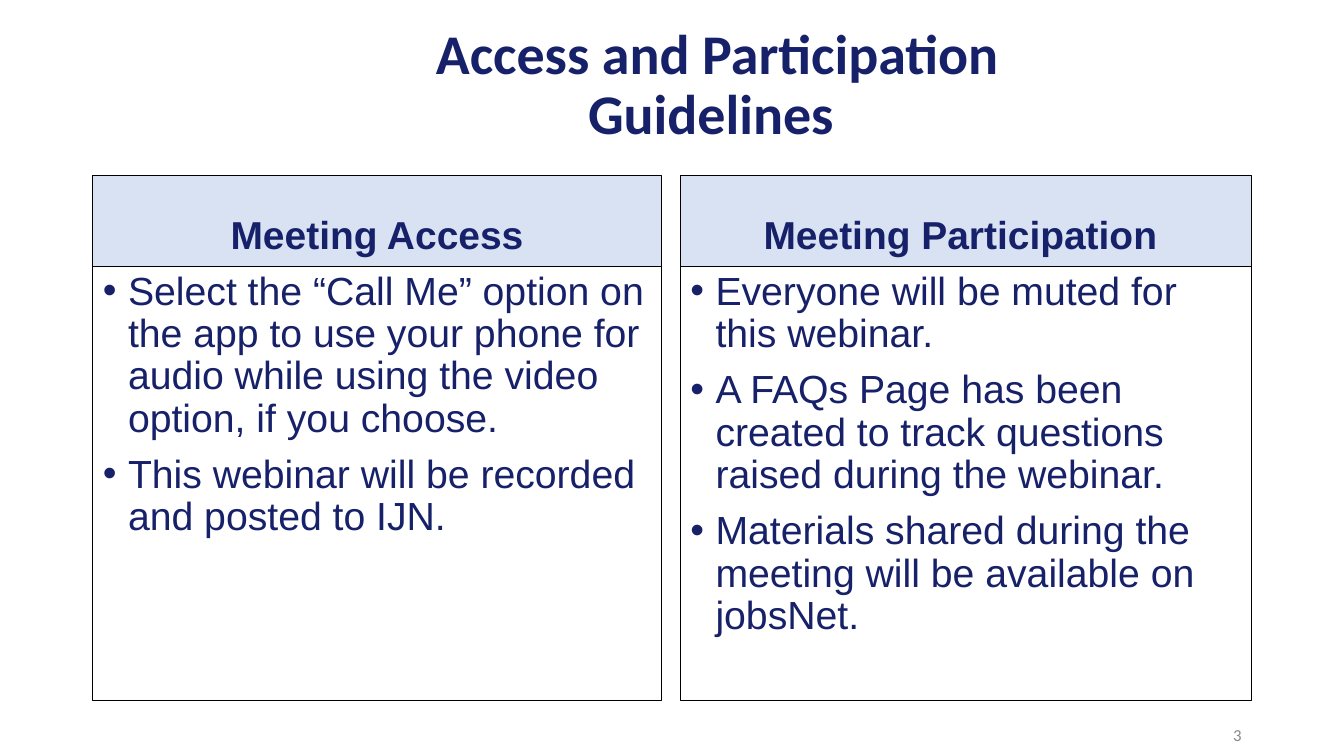
from pptx import Presentation
from pptx.dml.color import RGBColor
from pptx.enum import shapes, text
from pptx.oxml import ns
from pptx.util import Pt
from lxml import etree

COLORS = {"navy": "172169", "header": "D8E2F3", "border": "000000", "number": "888888"}

HEADER_HEIGHT = 65
PANEL_TOP, PANEL_HEIGHT = 125.2, 375.2

PANELS = [
    (66.4, 406, "Meeting Access", [
        "Select the “Call Me” option on the app to use your phone for audio while "
        "using the video option, if you choose.",
        "This webinar will be recorded and posted to IJN.",
    ]),
    (486, 408, "Meeting Participation ", [
        "Everyone will be muted for this webinar.",
        "A FAQs Page has been created to track questions raised during the webinar.",
        "Materials shared during the meeting will be available on jobsNet.",
    ]),
]


def color(name):
    return RGBColor.from_string(COLORS[name])


def add_bullet(paragraph, indent):
    properties = paragraph._p.get_or_add_pPr()
    properties.set("marL", str(Pt(indent)))
    properties.set("indent", str(-Pt(indent)))
    bullet_color = etree.SubElement(properties, ns.qn("a:buClr"))
    etree.SubElement(bullet_color, ns.qn("a:srgbClr"), val=COLORS["navy"])
    etree.SubElement(properties, ns.qn("a:buFont"), typeface="Arial")
    etree.SubElement(properties, ns.qn("a:buChar"), char="•")


def write_text(shape, lines, size, font="Arial", fill="navy", bold=False,
               align=text.PP_ALIGN.LEFT, anchor=text.MSO_ANCHOR.MIDDLE,
               spacing=0.9, gap=10, bullet_indent=0, bottom=3.6):
    frame = shape.text_frame
    frame.word_wrap = True
    frame.vertical_anchor = anchor
    frame.margin_left = frame.margin_right = Pt(7.2)
    frame.margin_top, frame.margin_bottom = Pt(3.6), Pt(bottom)
    for index, line in enumerate(lines):
        paragraph = frame.add_paragraph() if index else frame.paragraphs[0]
        if bullet_indent:
            add_bullet(paragraph, bullet_indent)
        paragraph.text = line
        paragraph.alignment = align
        paragraph.line_spacing = spacing
        paragraph.space_before = Pt(gap if index else 0)
        paragraph.font.name = font
        paragraph.font.size = Pt(size)
        paragraph.font.bold = bold
        paragraph.font.color.rgb = color(fill)


def add_text_box(slide, left, top, width, height, line, **style):
    box = slide.shapes.add_textbox(Pt(left), Pt(top), Pt(width), Pt(height))
    write_text(box, [line], font="Calibri", **style)


def add_bordered_box(slide, left, top, width, height, fill=None):
    box = slide.shapes.add_shape(shapes.MSO_SHAPE.RECTANGLE,
                                 Pt(left), Pt(top), Pt(width), Pt(height))
    box.shadow.inherit = False
    if fill:
        box.fill.solid()
        box.fill.fore_color.rgb = color(fill)
    else:
        box.fill.background()
    box.line.color.rgb = color("border")
    box.line.width = Pt(0.75)
    return box


def add_panel(slide, left, top, width, height, heading, bullets):
    """Place a shaded heading above a bordered bullet list."""
    header = add_bordered_box(slide, left, top, width, HEADER_HEIGHT, "header")
    write_text(header, [heading], 27.8, bold=True, align=text.PP_ALIGN.CENTER,
               anchor=text.MSO_ANCHOR.BOTTOM, spacing=0.7, bottom=7)
    body = add_bordered_box(slide, left, top + HEADER_HEIGHT, width, height - HEADER_HEIGHT)
    write_text(body, bullets, 28, anchor=text.MSO_ANCHOR.TOP, bullet_indent=18)


def main():
    presentation = Presentation()
    presentation.slide_width, presentation.slide_height = Pt(960), Pt(540)
    slide = presentation.slides.add_slide(presentation.slide_layouts[6])
    add_text_box(slide, 212.4, 39.6, 599.8, 43.9, "Access and Participation Guidelines ",
                 size=40, bold=True, align=text.PP_ALIGN.CENTER)
    for left, width, heading, bullets in PANELS:
        add_panel(slide, left, PANEL_TOP, width, PANEL_HEIGHT, heading, bullets)
    add_text_box(slide, 678, 510.5, 216, 28.8, "3", size=12, fill="number",
                 align=text.PP_ALIGN.RIGHT, spacing=1.0)
    presentation.save("out.pptx")


if __name__ == "__main__":
    main()
